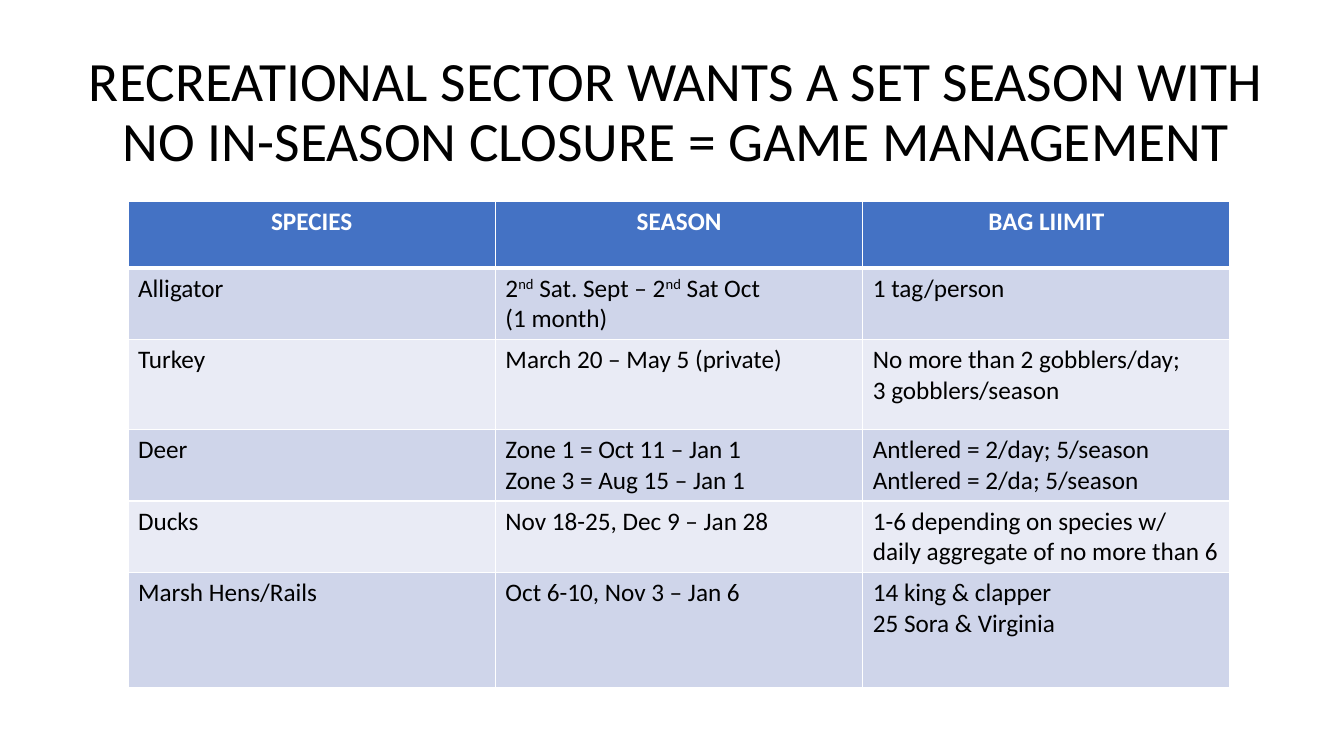
from lxml import etree
from pptx import Presentation
from pptx.dml.color import RGBColor
from pptx.enum.text import MSO_ANCHOR, MSO_AUTO_SIZE, PP_ALIGN
from pptx.oxml.ns import qn
from pptx.util import Inches, Pt

CENTER, LEFT = PP_ALIGN.CENTER, PP_ALIGN.LEFT
MIDDLE = MSO_ANCHOR.MIDDLE
NO_AUTOFIT = MSO_AUTO_SIZE.NONE
BLACK = RGBColor(0x00, 0x00, 0x00)
WHITE = RGBColor(0xFF, 0xFF, 0xFF)
HEADER = RGBColor(0x44, 0x72, 0xC4)
BANDS = (RGBColor(0xE9, 0xEB, 0xF5), RGBColor(0xCF, 0xD5, 0xEA))

TITLE = ("RECREATIONAL SECTOR WANTS A SET SEASON WITH "
         "NO IN-SEASON CLOSURE = GAME MANAGEMENT")
SEASONS = [
    ("SPECIES", "SEASON", "BAG LIIMIT"),
    ("Alligator", "2^nd^ Sat. Sept – 2^nd^ Sat Oct\n(1 month)", "1 tag/person"),
    ("Turkey", "March 20 – May 5 (private)",
     "No more than 2 gobblers/day;\n3 gobblers/season"),
    ("Deer", "Zone 1 = Oct 11 – Jan 1\nZone 3 = Aug 15 – Jan 1",
     "Antlered = 2/day; 5/season\nAntlered = 2/da; 5/season"),
    ("Ducks", "Nov 18-25, Dec 9 – Jan 28",
     "1-6 depending on species w/ daily aggregate of no more than 6"),
    ("Marsh Hens/Rails", "Oct 6-10, Nov 3 – Jan 6",
     "14 king & clapper\n25 Sora & Virginia"),
]
ROW_HEIGHTS = (0.66, 0.66, 0.89, 0.66, 0.66, 1.14)


class SlideBuilder:
    """Draws styled elements on the current slide."""

    font = "Calibri"

    def __init__(self, prs):
        self.s = prs.slides.add_slide(prs.slide_layouts[5])

    def style(self, p, size, color, align, bold=False):
        p.alignment = align
        p.font.name = self.font
        p.font.size = Pt(size)
        p.font.bold = bold
        p.font.color.rgb = color

    def title(self, text, left, top, width, height):
        sp = self.s.shapes.title
        sp.left, sp.top = Inches(left), Inches(top)
        sp.width, sp.height = Inches(width), Inches(height)
        tf = sp.text_frame
        tf.text = text
        tf.word_wrap = True
        tf.auto_size = NO_AUTOFIT
        tf.vertical_anchor = MIDDLE
        p = tf.paragraphs[0]
        p.line_spacing = 0.9
        self.style(p, 39.6, BLACK, CENTER)

    def borders(self, cell, top, bottom):
        tcPr = cell._tc.get_or_add_tcPr()
        for side, width in (("L", 1), ("R", 1), ("T", top), ("B", bottom)):
            ln = etree.SubElement(tcPr, qn(f"a:ln{side}"), w=str(Pt(width)))
            fill = etree.SubElement(ln, qn("a:solidFill"))
            etree.SubElement(fill, qn("a:srgbClr"), val=str(WHITE))

    def cell(self, cell, text, row):
        head = row == 0
        self.borders(cell, 3 if row == 1 else 1, 3 if head else 1)
        cell.fill.solid()
        cell.fill.fore_color.rgb = HEADER if head else BANDS[row % 2]
        tf = cell.text_frame
        for i, line in enumerate(text.split("\n")):
            p = tf.add_paragraph() if i else tf.paragraphs[0]
            self.style(p, 18, WHITE if head else BLACK,
                       CENTER if head else LEFT, head)
            for j, part in enumerate(line.split("^")):
                r = p.add_run()
                r.text = part
                if j % 2:
                    r._r.get_or_add_rPr().set("baseline", "30000")

    def table(self, rows, heights, left, top, width, height):
        frame = self.s.shapes.add_table(
            len(rows), len(rows[0]), Inches(left), Inches(top),
            Inches(width), Inches(height))
        for i, (texts, row_height) in enumerate(zip(rows, heights)):
            frame.table.rows[i].height = Inches(row_height)
            for j, text in enumerate(texts):
                self.cell(frame.table.cell(i, j), text, i)
        frame.height = Inches(height)


def main():
    prs = Presentation()
    prs.slide_width, prs.slide_height = Inches(13.33), Inches(7.5)
    slide = SlideBuilder(prs)
    slide.title(TITLE, 0.72, 0.4, 11.97, 1.45)
    slide.table(SEASONS, ROW_HEIGHTS, 1.27, 2, 10.93, 4.79)
    prs.save("out.pptx")


if __name__ == "__main__":
    main()
